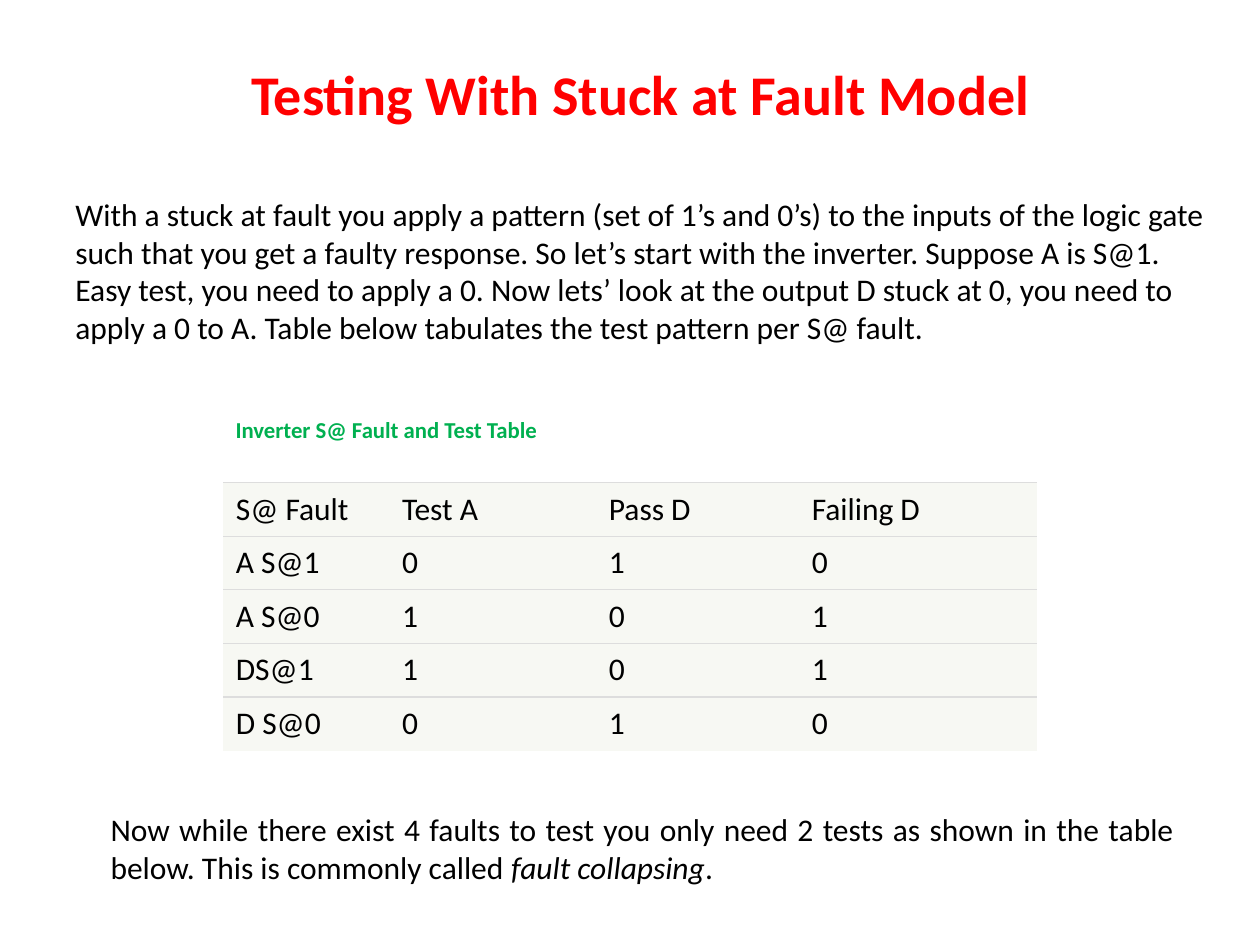
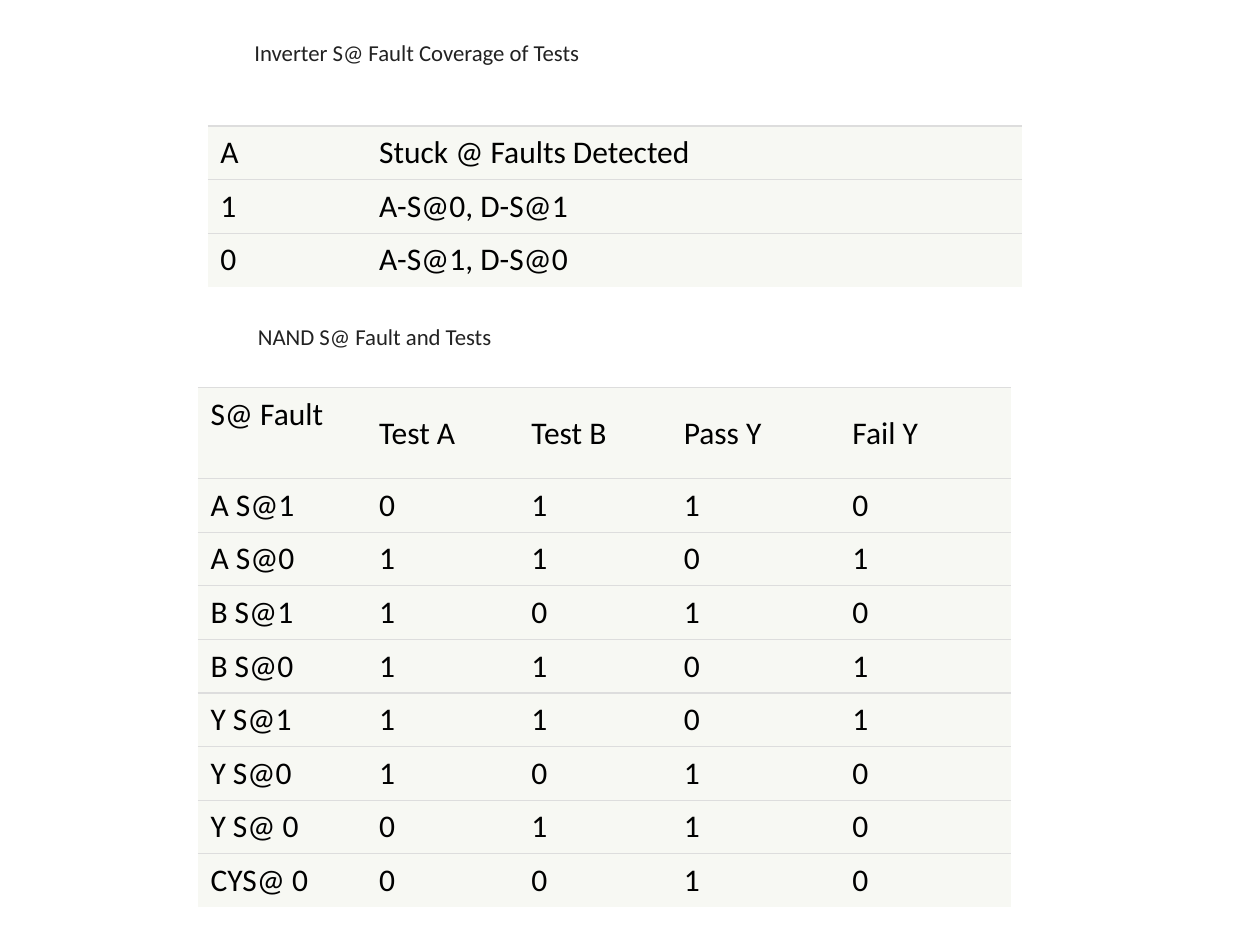
from dataclasses import dataclass

from lxml import etree
from pptx import Presentation
from pptx.dml.color import RGBColor
from pptx.enum.text import MSO_ANCHOR, MSO_AUTO_SIZE, PP_ALIGN
from pptx.oxml.ns import qn
from pptx.slide import Slide
from pptx.table import _Cell
from pptx.util import Cm, Pt

LEFT, CENTER, JUSTIFY = PP_ALIGN.LEFT, PP_ALIGN.CENTER, PP_ALIGN.JUSTIFY
TOP, MIDDLE = MSO_ANCHOR.TOP, MSO_ANCHOR.MIDDLE
FIT_SHAPE = MSO_AUTO_SIZE.SHAPE_TO_FIT_TEXT

RED = RGBColor(0xFF, 0x00, 0x00)
GREEN = RGBColor(0x00, 0xB0, 0x50)
BLACK = RGBColor(0x00, 0x00, 0x00)
CHARCOAL = RGBColor(0x22, 0x22, 0x22)
CELL_FILL = RGBColor(0xF7, 0xF8, 0xF3)
RULE_COLOR = RGBColor(0xDD, 0xDD, 0xDD)

FONT = "Calibri"
TITLE_SIZE, BODY_SIZE, CAPTION_SIZE = 32, 18, 13
TITLE_GAP = 39
RULE_WIDTH = 0.75
ROW_HEIGHT = 1.08
CELL_PADDING = 0.15


@dataclass(frozen=True)
class Span:
    text: str
    size: int = BODY_SIZE
    color: RGBColor = BLACK
    bold: bool = False
    italic: bool = False


@dataclass(frozen=True)
class Paragraph:
    spans: list[Span]
    align: PP_ALIGN = LEFT
    space_after: float = 0


@dataclass(frozen=True)
class TextBlock:
    left: float
    top: float
    width: float
    height: float
    paragraphs: list[Paragraph]
    anchor: MSO_ANCHOR = TOP


@dataclass(frozen=True)
class FaultTable:
    left: float
    top: float
    widths: list[float]
    rows: list[list[str]]
    header_height: float = ROW_HEIGHT
    corner_anchor: MSO_ANCHOR = MIDDLE


def caption(left: float, top: float, width: float, text: str,
            color: RGBColor = CHARCOAL, bold: bool = False) -> TextBlock:
    span = Span(text, CAPTION_SIZE, color, bold)
    return TextBlock(left, top, width, 0.81, [Paragraph([span])], MIDDLE)


def draw_text(page: Slide, block: TextBlock) -> None:
    box = page.shapes.add_textbox(Cm(block.left), Cm(block.top), Cm(block.width), Cm(block.height))
    frame = box.text_frame
    frame.word_wrap = True
    frame.auto_size = FIT_SHAPE
    frame.vertical_anchor = block.anchor
    for index, source in enumerate(block.paragraphs):
        para = frame.add_paragraph() if index else frame.paragraphs[0]
        para.alignment = source.align
        para.space_after = Pt(source.space_after)
        for span in source.spans:
            run = para.add_run()
            run.text = span.text
            run.font.name = FONT
            run.font.size = Pt(span.size)
            run.font.color.rgb = span.color
            run.font.bold = span.bold
            run.font.italic = span.italic


def set_borders(cell: _Cell, ruled: set[str]) -> None:
    properties = cell._tc.get_or_add_tcPr()
    for side in ("lnL", "lnR", "lnT", "lnB"):
        line = etree.SubElement(properties, qn(f"a:{side}"), w=str(Pt(RULE_WIDTH)))
        if side in ruled:
            fill = etree.SubElement(line, qn("a:solidFill"))
            etree.SubElement(fill, qn("a:srgbClr"), val=str(RULE_COLOR))
        else:
            etree.SubElement(line, qn("a:noFill"))


def format_cell(cell: _Cell, text: str, is_last_row: bool) -> None:
    set_borders(cell, {"lnT"} if is_last_row else {"lnT", "lnB"})
    cell.fill.solid()
    cell.fill.fore_color.rgb = CELL_FILL
    cell.vertical_anchor = MIDDLE
    cell.margin_top = cell.margin_bottom = Cm(CELL_PADDING)
    cell.text_frame.text = text
    font = cell.text_frame.paragraphs[0].runs[0].font
    font.name = FONT
    font.size = Pt(BODY_SIZE)
    font.color.rgb = BLACK


def draw_table(page: Slide, source: FaultTable) -> None:
    heights = [source.header_height] + [ROW_HEIGHT] * (len(source.rows) - 1)
    table = page.shapes.add_table(
        len(source.rows), len(source.widths), Cm(source.left), Cm(source.top),
        Cm(sum(source.widths)), Cm(sum(heights)),
    ).table
    table.first_row = False
    table.horz_banding = False
    for column, width in zip(table.columns, source.widths):
        column.width = Cm(width)
    for row_index, (row, height) in enumerate(zip(source.rows, heights)):
        table.rows[row_index].height = Cm(height)
        for column_index, text in enumerate(row):
            format_cell(table.cell(row_index, column_index), text, row_index == len(heights) - 1)
    table.cell(0, 0).vertical_anchor = source.corner_anchor


INTRODUCTION = TextBlock(1.27, 1.07, 23.29, 6.07, [
    Paragraph([Span("Testing With Stuck at Fault Model", TITLE_SIZE, RED, bold=True)],
              CENTER, TITLE_GAP),
    Paragraph([Span(
        "With a stuck at fault you apply a pattern (set of 1’s and 0’s) to the inputs of the "
        "logic gate such that you get a faulty response. So let’s start with the inverter. "
        "Suppose A is S@1. Easy test, you need to apply a 0. Now lets’ look at the output D "
        "stuck at 0, you need to apply a 0 to A. Table below tabulates the test pattern per "
        "S@ fault."
    )]),
])

CONCLUSION = TextBlock(1.98, 16.21, 21.95, 1.8, [
    Paragraph([
        Span("Now while there exist 4 faults to test you only need 2 tests as shown in the "
             "table below. This is commonly called "),
        Span("fault collapsing", italic=True),
        Span("."),
    ], JUSTIFY),
])

INVERTER_TESTS = FaultTable(4.5, 9.73, [3.35, 4.17, 4.09, 4.8], [
    ["S@ Fault", "Test A", "Pass D", "Failing D"],
    ["A S@1", "0", "1", "0"],
    ["A S@0", "1", "0", "1"],
    ["DS@1", "1", "0", "1"],
    ["D S@0", "0", "1", "0"],
])

INVERTER_COVERAGE = FaultTable(4.19, 2.54, [3.2, 13.21], [
    ["A", "Stuck @ Faults Detected"],
    ["1", "A-S@0, D-S@1"],
    ["0", "A-S@1, D-S@0"],
])

NAND_TESTS = FaultTable(3.99, 7.82, [3.4, 3.07, 3.07, 3.4, 3.45], [
    ["S@ Fault", "Test A", "Test B", "Pass Y", "Fail Y"],
    ["A S@1", "0", "1", "1", "0"],
    ["A S@0", "1", "1", "0", "1"],
    ["B S@1", "1", "0", "1", "0"],
    ["B S@0", "1", "1", "0", "1"],
    ["Y S@1", "1", "1", "0", "1"],
    ["Y S@0", "1", "0", "1", "0"],
    ["Y S@ 0", "0", "1", "1", "0"],
    ["CYS@ 0", "0", "0", "1", "0"],
], header_height=1.83, corner_anchor=TOP)

PAGES = [
    [
        INTRODUCTION,
        INVERTER_TESTS,
        caption(4.5, 8.26, 7.67, "Inverter S@ Fault and Test Table", GREEN, bold=True),
        CONCLUSION,
    ],
    [
        INVERTER_COVERAGE,
        caption(4.88, 0.66, 15.04, "Inverter S@ Fault Coverage of Tests"),
        NAND_TESTS,
        caption(4.95, 6.38, 15.44, "NAND S@ Fault and Tests"),
    ],
]


def main() -> None:
    deck = Presentation()
    deck.slide_width, deck.slide_height = Cm(25.4), Cm(19.05)
    blank_layout = deck.slide_layouts[6]
    for elements in PAGES:
        page = deck.slides.add_slide(blank_layout)
        for element in elements:
            if isinstance(element, FaultTable):
                draw_table(page, element)
            else:
                draw_text(page, element)
    deck.save("out.pptx")


if __name__ == "__main__":
    main()
